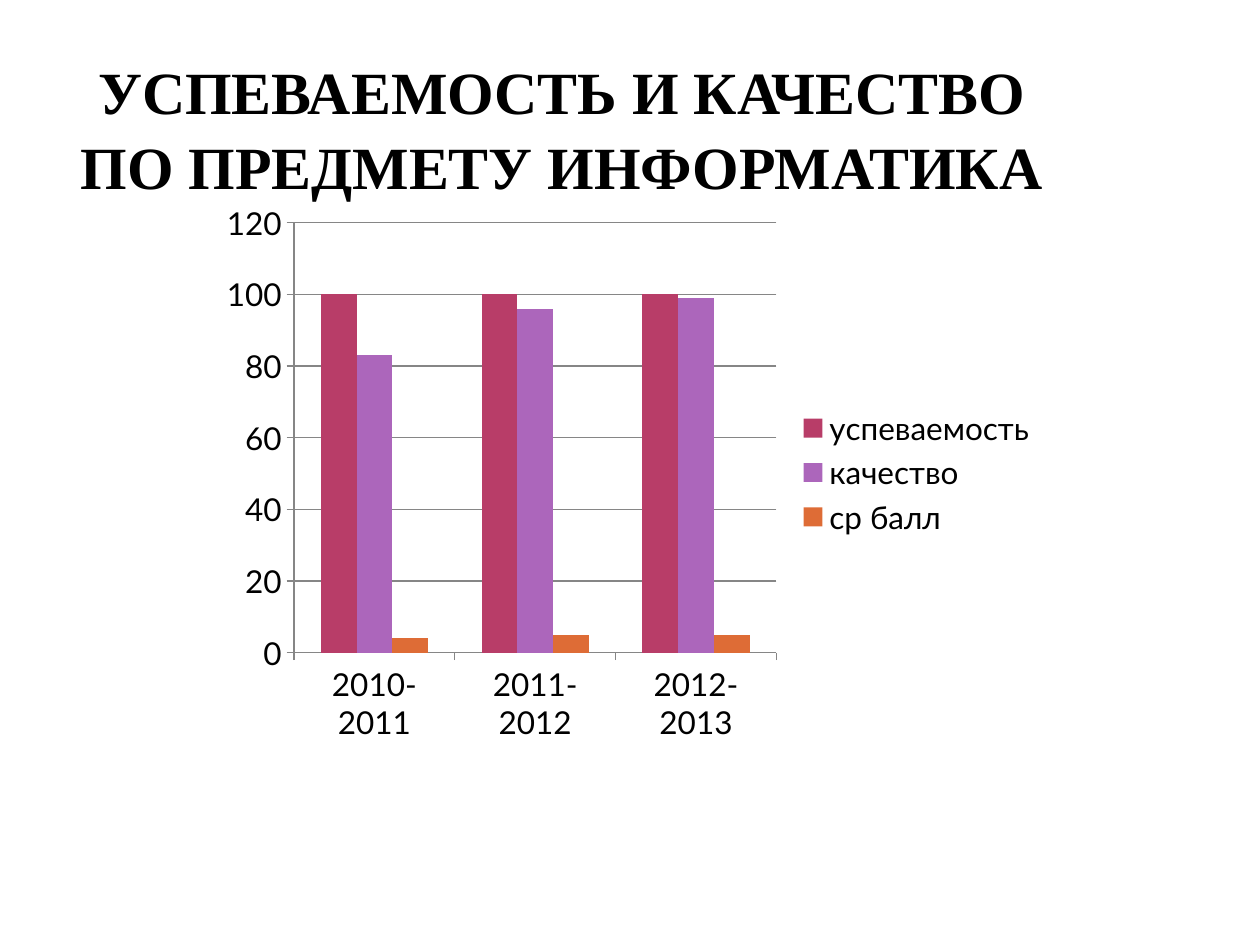
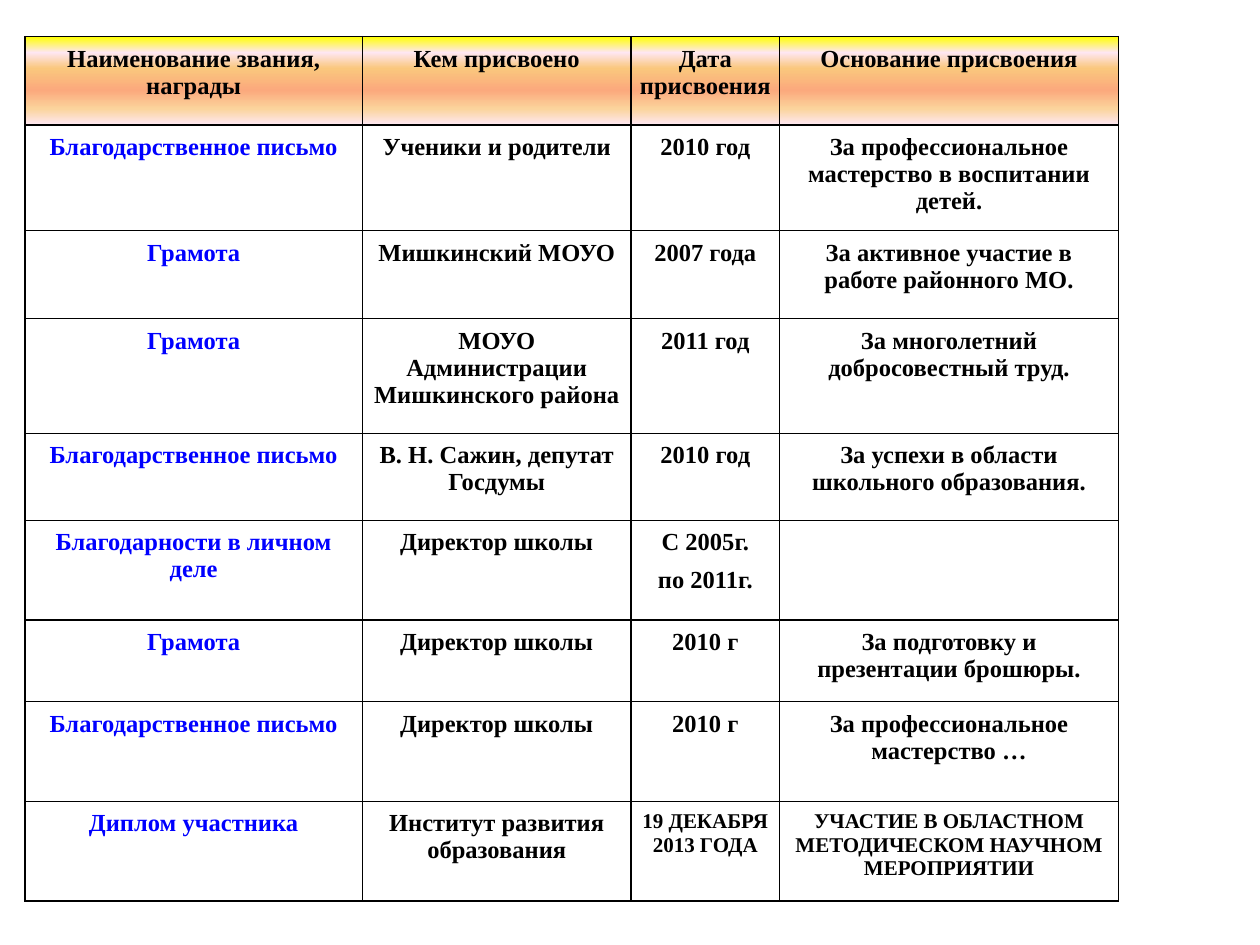
from dataclasses import dataclass

from pptx import Presentation
from pptx.chart.data import CategoryChartData
from pptx.dml.color import RGBColor as RGB
from pptx.enum.chart import XL_CHART_TYPE as ChartType
from pptx.enum.chart import XL_LEGEND_POSITION as LegendPosition
from pptx.enum.chart import XL_TICK_MARK as TickMark
from pptx.enum.text import MSO_ANCHOR as Anchor
from pptx.enum.text import PP_ALIGN as Align
from pptx.oxml import parse_xml
from pptx.oxml.ns import nsdecls
from pptx.util import Pt


@dataclass(frozen=True)
class Theme:
    serif: str = "Times New Roman"
    sans: str = "Lato"
    black: str = "000000"
    award: str = "0000FF"
    axis: str = "868686"
    series: tuple = ("B83D68", "AC66BB", "DE6C36")
    header: tuple = ((0, "FFFF00"), (18, "FEE7F2"), (36, "FAC77D"),
                     (61, "FBA97D"), (82, "FBD49C"), (100, "FEE7F2"))
    title_size: float = 34.2
    chart_size: float = 18
    cell_size: float = 14
    small_size: float = 12


THEME = Theme()

YEARS = ("2010-2011", "2011-2012", "2012-2013")
RESULTS = {
    "успеваемость": (100, 100, 100),
    "качество": (83, 96, 99),
    "ср балл": (4, 5, 5),
}

AWARD_COLUMNS = (193, 153.4, 85, 193.6)
AWARD_ROWS = (50.4, 56.9, 50.4, 65.5, 49.7, 56.9, 46.8, 56.9, 56.9)
AWARDS = (
    ("Наименование звания, награды", "Кем присвоено",
     "Дата\nприсвоения", "Основание присвоения"),
    ("Благодарственное письмо", "Ученики и родители", "2010 год",
     "За профессиональное мастерство в воспитании детей."),
    ("Грамота", "Мишкинский МОУО", "2007 года",
     "За активное участие в работе районного МО."),
    ("Грамота", "МОУО Администрации Мишкинского района", "2011 год",
     "За многолетний добросовестный труд."),
    ("Благодарственное письмо", "В. Н. Сажин, депутат Госдумы", "2010 год",
     "За успехи в области школьного образования."),
    ("Благодарности в личном деле", "Директор школы",
     "С 2005г.\nпо 2011г.", ""),
    ("Грамота", "Директор школы", "2010 г",
     "За подготовку и презентации брошюры."),
    ("Благодарственное письмо", "Директор школы", "2010 г",
     "За профессиональное мастерство …"),
    ("Диплом участника", "Институт развития образования",
     "19 ДЕКАБРЯ 2013 ГОДА",
     "УЧАСТИЕ В ОБЛАСТНОМ МЕТОДИЧЕСКОМ НАУЧНОМ МЕРОПРИЯТИИ"),
)


def format_text(frame, size, color):
    """Centred bold serif text, as on both slides."""
    for paragraph in frame.paragraphs:
        paragraph.alignment = Align.CENTER
        for run in paragraph.runs:
            run.font.name = THEME.serif
            run.font.size = Pt(size)
            run.font.bold = True
            run.font.color.rgb = RGB.from_string(color)


def add_title(slide, text, left, top, width, height):
    frame = slide.shapes.add_textbox(
        Pt(left), Pt(top), Pt(width), Pt(height)).text_frame
    frame.word_wrap = True
    frame.vertical_anchor = Anchor.BOTTOM
    frame.margin_left = frame.margin_right = Pt(3.6)
    frame.margin_top = frame.margin_bottom = 0
    frame.text = text
    frame.paragraphs[0].line_spacing = 1.05
    format_text(frame, THEME.title_size, THEME.black)


def style_line(line):
    line.color.rgb = RGB.from_string(THEME.axis)
    line.width = Pt(0.75)


def add_results_chart(slide, left, top, width, height):
    results = CategoryChartData()
    results.categories = YEARS
    for name, values in RESULTS.items():
        results.add_series(name, values)
    chart = slide.shapes.add_chart(
        ChartType.COLUMN_CLUSTERED, Pt(left), Pt(top), Pt(width), Pt(height),
        results).chart
    chart.has_title = False
    chart.font.name = THEME.sans
    chart.font.size = Pt(THEME.chart_size)
    chart.font.color.rgb = RGB.from_string(THEME.black)

    # Columns
    plot = chart.plots[0]
    plot.vary_by_categories = False
    plot.gap_width = 150
    plot.overlap = 0
    for series, color in zip(plot.series, THEME.series):
        series.format.fill.solid()
        series.format.fill.fore_color.rgb = RGB.from_string(color)

    # Axes and legend
    scale = chart.value_axis
    scale.minimum_scale, scale.maximum_scale, scale.major_unit = 0, 120, 20
    scale.has_major_gridlines = True
    style_line(scale.major_gridlines.format.line)
    for axis in (scale, chart.category_axis):
        axis.major_tick_mark = TickMark.OUTSIDE
        style_line(axis.format.line)
    chart.has_legend = True
    chart.legend.position = LegendPosition.RIGHT
    chart.legend.include_in_layout = False


def add_borders(cell):
    properties = cell._tc.get_or_add_tcPr()
    for side in "LRTB":
        properties.append(parse_xml(
            f'<a:ln{side} {nsdecls("a")} w="12700"><a:solidFill>'
            f'<a:srgbClr val="{THEME.black}"/></a:solidFill></a:ln{side}>'))


def fill_header(cell):
    stops = "".join(
        f'<a:gs pos="{position * 1000}"><a:srgbClr val="{color}"/></a:gs>'
        for position, color in THEME.header)
    cell._tc.get_or_add_tcPr().append(parse_xml(
        f'<a:gradFill {nsdecls("a")} rotWithShape="1"><a:gsLst>{stops}'
        '</a:gsLst><a:lin ang="5400000" scaled="0"/></a:gradFill>'))


def fill_cell(cell, text, size, color, is_header):
    cell.margin_left = cell.margin_right = Pt(5)
    cell.margin_top = cell.margin_bottom = Pt(5)
    cell.text_frame.text = text
    format_text(cell.text_frame, size, color)
    for paragraph in cell.text_frame.paragraphs:
        paragraph.space_after = Pt(5.8)
    if is_header:
        cell.text_frame.paragraphs[0].space_after = Pt(0 if "\n" in text else 5.8)
    add_borders(cell)
    if is_header:
        fill_header(cell)
    else:
        cell.fill.background()


def add_awards_table(slide, left, top):
    table = slide.shapes.add_table(
        len(AWARD_ROWS), len(AWARD_COLUMNS), Pt(left), Pt(top),
        Pt(sum(AWARD_COLUMNS)), Pt(sum(AWARD_ROWS))).table
    table.first_row = table.horz_banding = False
    for column, width in zip(table.columns, AWARD_COLUMNS):
        column.width = Pt(width)
    for row, height in zip(table.rows, AWARD_ROWS):
        row.height = Pt(height)
    last = len(AWARDS) - 1
    for r, award in enumerate(AWARDS):
        for c, text in enumerate(award):
            color = THEME.award if r > 0 and c == 0 else THEME.black
            size = THEME.small_size if r == last and c > 1 else THEME.cell_size
            fill_cell(table.cell(r, c), text, size, color, r == 0)


def main():
    deck = Presentation()
    deck.slide_width, deck.slide_height = Pt(720), Pt(540)
    blank = deck.slide_layouts[6]

    # Results by year
    results_slide = deck.slides.add_slide(blank)
    add_title(results_slide, "УСПЕВАЕМОСТЬ И КАЧЕСТВО ПО ПРЕДМЕТУ ИНФОРМАТИКА",
              36, 25.2, 570, 90)
    add_results_chart(results_slide, 120, 110, 480, 320)

    # Awards
    add_awards_table(deck.slides.add_slide(blank), 14.2, 20.9)

    deck.save("out.pptx")


if __name__ == "__main__":
    main()
